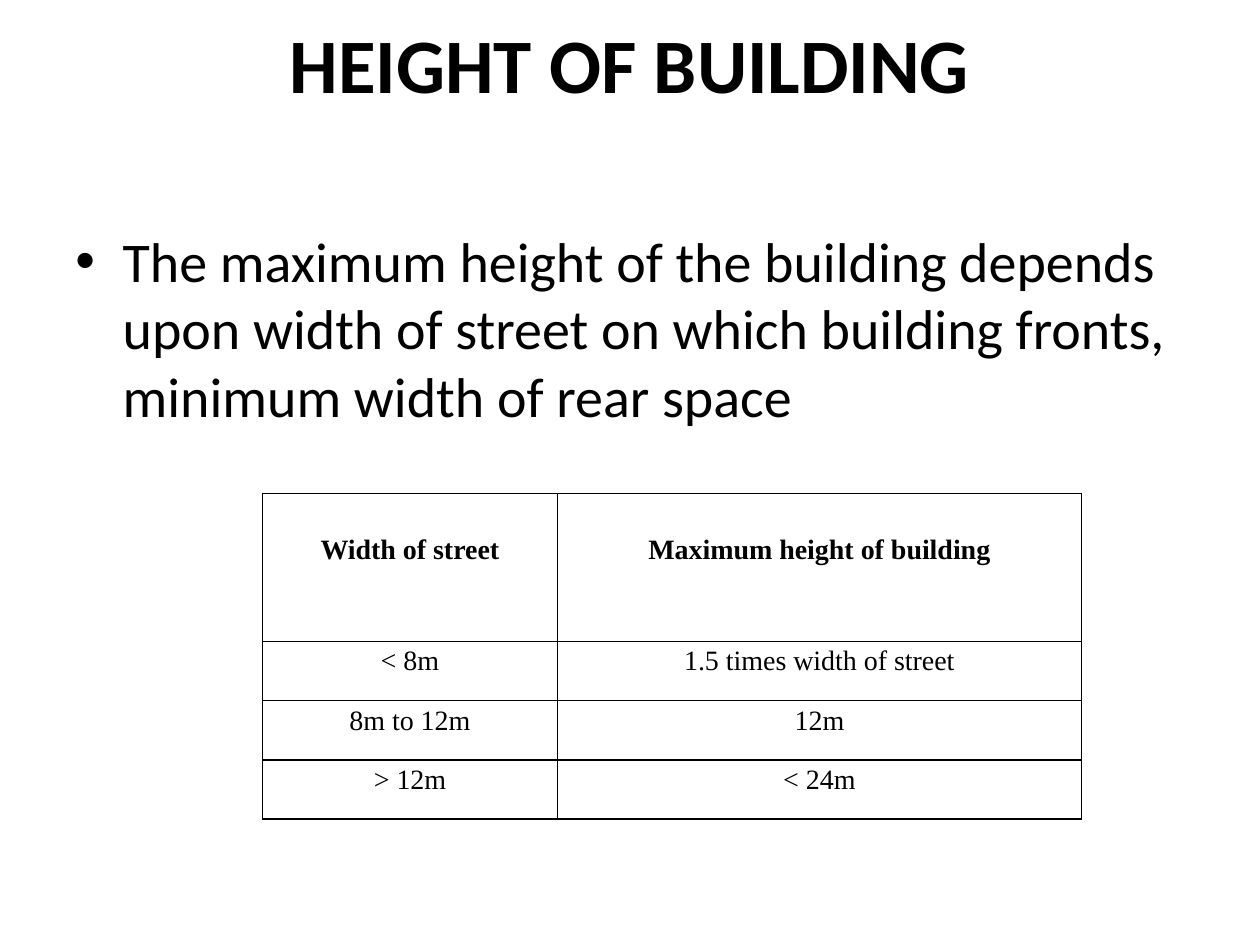
from lxml import etree
from pptx import Presentation
from pptx.dml.color import RGBColor
from pptx.enum.text import MSO_ANCHOR, PP_ALIGN
from pptx.oxml.ns import qn
from pptx.util import Pt

CENTER, LEFT = PP_ALIGN.CENTER, PP_ALIGN.LEFT
TOP, MIDDLE = MSO_ANCHOR.TOP, MSO_ANCHOR.MIDDLE

BLACK = "000000"
HEADING_FONT = "Calibri"
TABLE_FONT = "Times New Roman"

HEIGHT_LIMITS = [
    ("Width of street", "Maximum height of building"),
    ("< 8m", "1.5 times width of street"),
    ("8m to 12m", "12m"),
    ("> 12m", "< 24m"),
]
COLUMN_WIDTHS = [168.5, 299.5]
HEADER_HEIGHT, ROW_HEIGHT = 84.5, 33.9
HEADER_TOP_MARGIN = 21


def color(hex_string):
    return RGBColor.from_string(hex_string)


def write_text(frame, text, font=HEADING_FONT, size=32, bold=False,
               align=LEFT, line_spacing=1.0, space_before=0):
    paragraph = frame.paragraphs[0]
    paragraph.alignment = align
    paragraph.line_spacing = line_spacing
    paragraph.space_before = Pt(space_before)
    run = paragraph.add_run()
    run.text = text
    run.font.name = font
    run.font.size = Pt(size)
    run.font.bold = bold
    run.font.color.rgb = color(BLACK)
    return paragraph


def add_text(slide, left, top, width, height, text, anchor=TOP, **text_format):
    box = slide.shapes.add_textbox(Pt(left), Pt(top), Pt(width), Pt(height))
    box.text_frame.word_wrap = True
    box.text_frame.vertical_anchor = anchor
    return write_text(box.text_frame, text, **text_format)


def add_bullet(paragraph, indent):
    properties = paragraph._p.get_or_add_pPr()
    properties.set("marL", str(Pt(indent)))
    properties.set("indent", str(-Pt(indent)))
    etree.SubElement(properties, qn("a:buFont"), typeface="Arial")
    etree.SubElement(properties, qn("a:buChar"), char="•")


def set_borders(cell, hex_string, width):
    properties = cell._tc.get_or_add_tcPr()
    for position, side in enumerate(("lnL", "lnR", "lnT", "lnB")):
        border = etree.Element(qn(f"a:{side}"), w=str(Pt(width)))
        fill = etree.SubElement(border, qn("a:solidFill"))
        etree.SubElement(fill, qn("a:srgbClr"), val=hex_string)
        properties.insert(position, border)


def add_limits_table(slide, left, top):
    heights = [HEADER_HEIGHT] + [ROW_HEIGHT] * (len(HEIGHT_LIMITS) - 1)
    table = slide.shapes.add_table(
        len(heights), len(COLUMN_WIDTHS), Pt(left), Pt(top),
        Pt(sum(COLUMN_WIDTHS)), Pt(sum(heights))).table
    table.first_row = table.horz_banding = False
    for column, width in zip(table.columns, COLUMN_WIDTHS):
        column.width = Pt(width)
    for row_index, (height, texts) in enumerate(zip(heights, HEIGHT_LIMITS)):
        is_header = row_index == 0
        table.rows[row_index].height = Pt(height)
        for cell, text in zip(table.rows[row_index].cells, texts):
            cell.margin_left = cell.margin_right = Pt(5)
            cell.margin_top = Pt(HEADER_TOP_MARGIN if is_header else 0)
            cell.margin_bottom = Pt(0)
            cell.fill.background()
            set_borders(cell, BLACK, 1)
            write_text(cell.text_frame, text, font=TABLE_FONT, size=16,
                       bold=is_header, align=CENTER, line_spacing=1.15)


def main():
    presentation = Presentation()
    presentation.slide_width, presentation.slide_height = Pt(720), Pt(540)
    slide = presentation.slides.add_slide(presentation.slide_layouts[6])

    add_text(slide, 36, 0, 648, 72, "HEIGHT OF BUILDING",
             anchor=MIDDLE, size=44, bold=True, align=CENTER)
    rule = add_text(
        slide, 36, 126, 648, 356.4,
        "The maximum height of the building depends upon width of street "
        "on which building fronts, minimum width of rear space",
        space_before=6.4)
    add_bullet(rule, 27)
    add_limits_table(slide, 150, 282)

    presentation.save("out.pptx")


if __name__ == "__main__":
    main()
